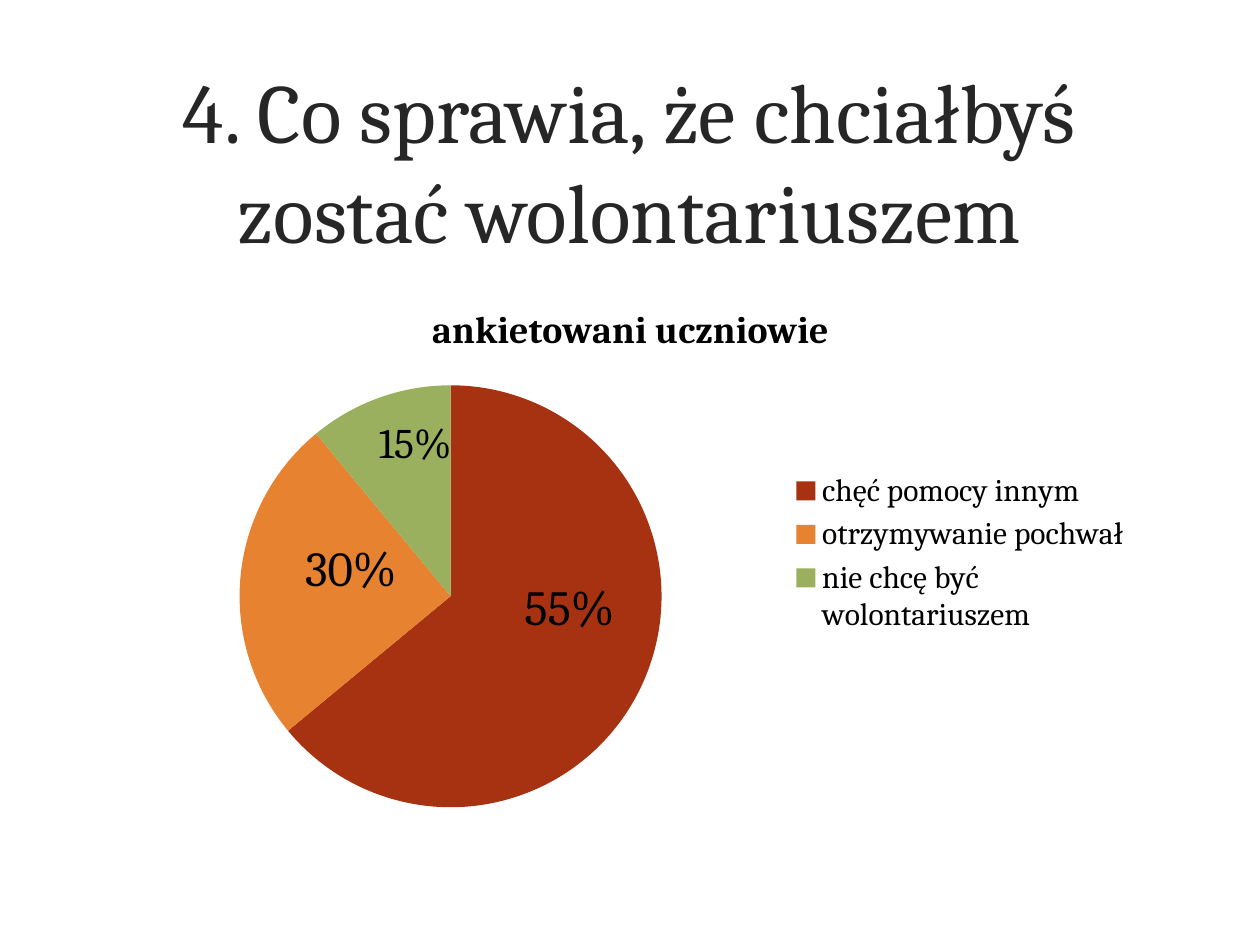
import pptx
import pptx.chart.data
import pptx.dml.color
import pptx.enum.chart
import pptx.enum.text
import pptx.oxml
import pptx.oxml.ns
import pptx.util
from pptx.util import Cm

FONT = "Cambria"
ANSWERS = [
    ("chęć pomocy innym", 64, "A63212"),
    ("otrzymywanie pochwał", 25, "E68230"),
    ("nie chcę być wolontariuszem", 11, "9BB05E"),
]
LABELS = [
    ("15%", 5.05, 2.62, 2.21, 1.27, 24),
    ("30%", 3.56, 5.05, 2.51, 1.45, 28),
    ("55%", 7.98, 5.84, 2.51, 1.45, 28),
]


def color(value):
    return pptx.dml.color.RGBColor.from_string(value)


def format_font(font, size, fill="000000", bold=False):
    font.name = FONT
    font.size = pptx.util.Pt(size)
    font.bold = bold
    font.color.rgb = color(fill)


def write_text(tf, text, align=pptx.enum.text.PP_ALIGN.LEFT, **style):
    p = tf.paragraphs[0]
    p.alignment = align
    r = p.add_run()
    r.text = text
    format_font(r.font, **style)


def set_layout(element, x, y, w, h, inner=False):
    ns = pptx.oxml.ns.nsdecls("c")
    target = '<c:layoutTarget val="inner"/>' if inner else ""
    layout = pptx.oxml.parse_xml(
        f"<c:layout {ns}><c:manualLayout>{target}"
        '<c:xMode val="edge"/><c:yMode val="edge"/>'
        f'<c:x val="{x}"/><c:y val="{y}"/><c:w val="{w}"/><c:h val="{h}"/>'
        "</c:manualLayout></c:layout>"
    )
    for old in element.findall(pptx.oxml.ns.qn("c:layout")):
        element.remove(old)
    if inner:
        element.insert(0, layout)
    else:
        element.find(pptx.oxml.ns.qn("c:legendPos")).addnext(layout)


def add_title(slide, left, top, width, height):
    sp = slide.shapes.title
    sp.left, sp.top, sp.width, sp.height = (Cm(v) for v in (left, top, width, height))
    tf = sp.text_frame
    tf.word_wrap = True
    tf.auto_size = pptx.enum.text.MSO_AUTO_SIZE.NONE
    tf.vertical_anchor = pptx.enum.text.MSO_ANCHOR.MIDDLE
    write_text(tf, "4. Co sprawia, że chciałbyś zostać wolontariuszem",
               align=pptx.enum.text.PP_ALIGN.CENTER, size=48, fill="262626")


def add_pie(slide, left, top, width, height):
    data = pptx.chart.data.CategoryChartData()
    data.categories = [name for name, _, _ in ANSWERS]
    data.add_series("ankietowani uczniowie", [value for _, value, _ in ANSWERS])
    chart = slide.shapes.add_chart(
        pptx.enum.chart.XL_CHART_TYPE.PIE,
        Cm(left), Cm(top), Cm(width), Cm(height), data).chart
    format_font(chart.font, 18)

    chart.has_title = True
    write_text(chart.chart_title.text_frame, "ankietowani uczniowie",
               align=pptx.enum.text.PP_ALIGN.CENTER, size=21.6, bold=True)
    chart.chart_title.include_in_layout = False

    chart.has_legend = True
    chart.legend.position = pptx.enum.chart.XL_LEGEND_POSITION.RIGHT
    chart.legend.include_in_layout = False
    format_font(chart.legend.font, 18)

    plot = chart.plots[0]
    plot.vary_by_categories = True
    for i, (_, _, fill) in enumerate(ANSWERS):
        point = plot.series[0].points[i]
        point.format.fill.solid()
        point.format.fill.fore_color.rgb = color(fill)

    plot_area = chart.element.find(".//" + pptx.oxml.ns.qn("c:plotArea"))
    set_layout(plot_area, 0.12, 0.19, 0.41, 0.78, inner=True)
    set_layout(chart.legend._element, 0.65, 0.34, 0.34, 0.32)


def add_labels(slide, left, top):
    for text, dx, dy, width, height, size in LABELS:
        sp = slide.shapes.add_textbox(Cm(left + dx), Cm(top + dy), Cm(width), Cm(height))
        tf = sp.text_frame
        tf.word_wrap = False
        tf.auto_size = pptx.enum.text.MSO_AUTO_SIZE.SHAPE_TO_FIT_TEXT
        write_text(tf, text, size=size)


def main():
    prs = pptx.Presentation()
    prs.slide_width, prs.slide_height = Cm(25.4), Cm(19.05)
    slide = prs.slides.add_slide(prs.slide_layouts[5])
    add_title(slide, 1.52, 1.22, 22.33, 4.01)
    add_pie(slide, 2.34, 5.66, 20.75, 10.97)
    add_labels(slide, 2.34, 5.66)
    prs.save("out.pptx")


if __name__ == "__main__":
    main()
